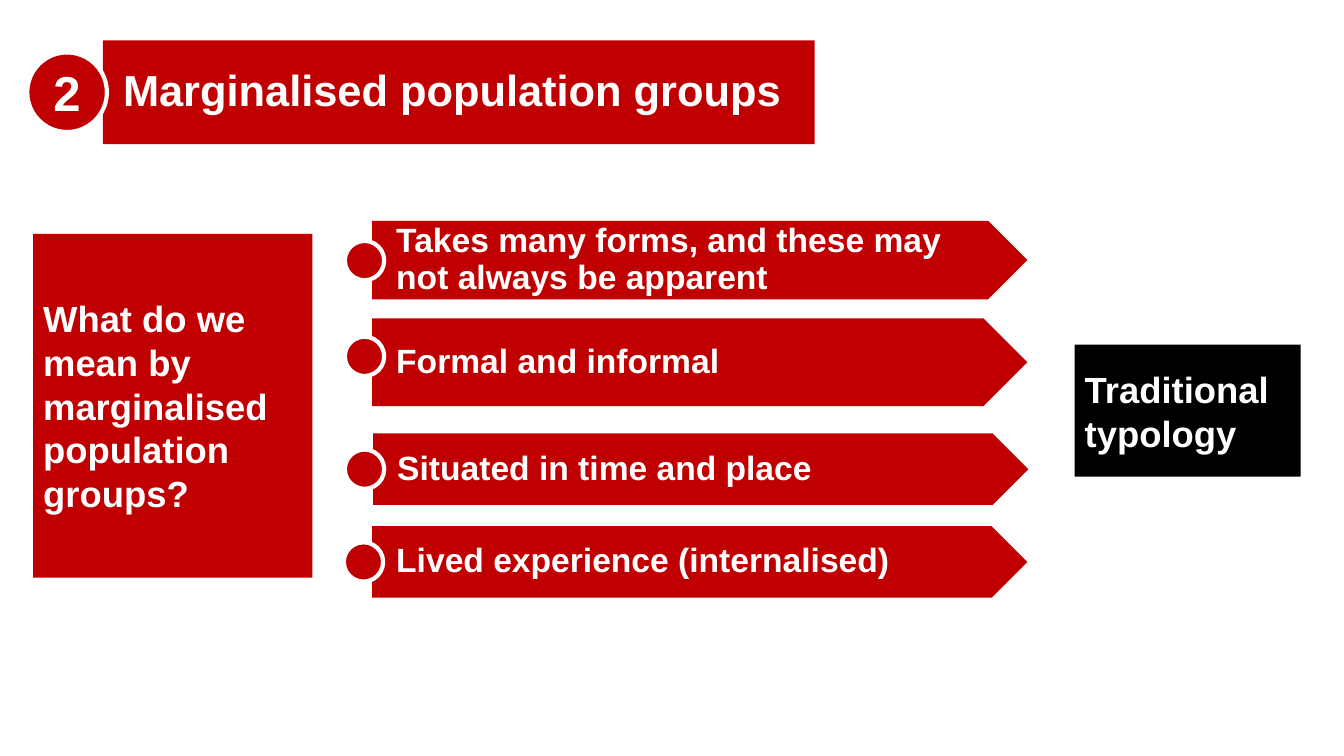
import dataclasses

import pptx
import pptx.dml.color
import pptx.enum.shapes
import pptx.enum.text
import pptx.util

PX = 9144  # EMU in one px, 100 px to the inch
SHAPES = pptx.enum.shapes.MSO_SHAPE
ALIGN = pptx.enum.text.PP_ALIGN


@dataclasses.dataclass(frozen=True)
class Theme:
    font: str = "Arial"
    red: str = "C00000"
    black: str = "000000"
    white: str = "FFFFFF"
    number: int = 35
    title: int = 31
    panel: int = 26
    arrow: int = 24
    outline: int = 3


THEME = Theme()

# Wording, arrow offset, top and height, then dot left and top, in the list's box
ARROWS = [
    ("Takes many forms, and these may not always be apparent", 0, 0, 78, -27, 20),
    ("Formal and informal", 0, 97, 87, -27, 115),
    ("Situated in time and place", 1, 211, 71, -27, 227),
    ("Lived experience (internalised)", 0, 303, 71, -28, 319),
]


def set_all(target, values):
    for name, value in values.items():
        setattr(target, name, value)


def rgb(colour):
    return pptx.dml.color.RGBColor.from_string(colour)


def place(shape, box):
    names = ("left", "top", "width", "height")
    set_all(shape, {name: length * PX for name, length in zip(names, box)})


def paint(shape, colour):
    shape.fill.solid()
    shape.fill.fore_color.rgb = rgb(colour)


def add_block(page, kind, box, colour, outlined=False):
    shape = page.shapes.add_shape(kind, 0, 0, 0, 0)
    place(shape, box)
    paint(shape, colour)
    shape.shadow.inherit = False
    if outlined:
        shape.line.color.rgb = rgb(THEME.white)
        shape.line.width = pptx.util.Pt(THEME.outline)
    else:
        shape.line.fill.background()
    return shape


def write(shape, text, size, left=10, right=10, spacing=1.0, align=ALIGN.LEFT):
    frame = shape.text_frame
    set_all(frame, {
        "word_wrap": True,
        "auto_size": pptx.enum.text.MSO_AUTO_SIZE.NONE,
        "vertical_anchor": pptx.enum.text.MSO_ANCHOR.MIDDLE,
        "margin_left": left * PX,
        "margin_right": right * PX,
        "margin_top": 5 * PX,
        "margin_bottom": 5 * PX,
    })
    para = frame.paragraphs[0]
    set_all(para, {"alignment": align, "line_spacing": spacing,
                   "space_before": pptx.util.Pt(0)})
    span = para.add_run()
    span.text = text
    set_all(span.font, {"name": THEME.font, "size": pptx.util.Pt(size), "bold": True})
    span.font.color.rgb = rgb(THEME.white)


def add_heading(page, box, number, text):
    """Title bar with a numbered circle over its left end."""
    left, top, width, height = box
    title = page.shapes.title
    place(title, (left + 75, top, width - 75, height))
    paint(title, THEME.red)
    write(title, text, THEME.title, left=20, right=20, spacing=0.9)
    circle = add_block(page, SHAPES.OVAL, (left, top + 12, 79, 79), THEME.red, True)
    write(circle, number, THEME.number, align=ALIGN.CENTER)


def add_panel(page, box, text, colour):
    """Plain rectangle with one statement."""
    write(add_block(page, SHAPES.RECTANGLE, box, colour), text, THEME.panel)


def add_arrow_list(page, box, rows):
    """Column of pointed bars, each with a dot on its left edge."""
    left, top, width, _ = box
    for text, shift, bar_top, height, dot_left, dot_top in rows:
        bar = add_block(page, SHAPES.PENTAGON,
                        (left + shift, top + bar_top, width, height), THEME.red)
        write(bar, text, THEME.arrow, left=24, spacing=0.9)
        add_block(page, SHAPES.OVAL, (left + dot_left, top + dot_top, 39, 39),
                  THEME.red, True)


def main():
    deck = pptx.Presentation()
    set_all(deck, {"slide_width": 1333 * PX, "slide_height": 750 * PX})
    page = deck.slides.add_slide(deck.slide_layouts.get_by_name("Title Only"))

    # Heading
    add_heading(page, (27, 40, 781, 103), "2", "Marginalised population groups")
    # Question, answers and label
    add_panel(page, (33, 232, 277, 341),
              "What do we mean by marginalised population groups?", THEME.red)
    add_arrow_list(page, (369, 219, 650, 374), ARROWS)
    add_panel(page, (1066, 342, 224, 131), "Traditional typology", THEME.black)

    deck.save("out.pptx")


if __name__ == "__main__":
    main()
